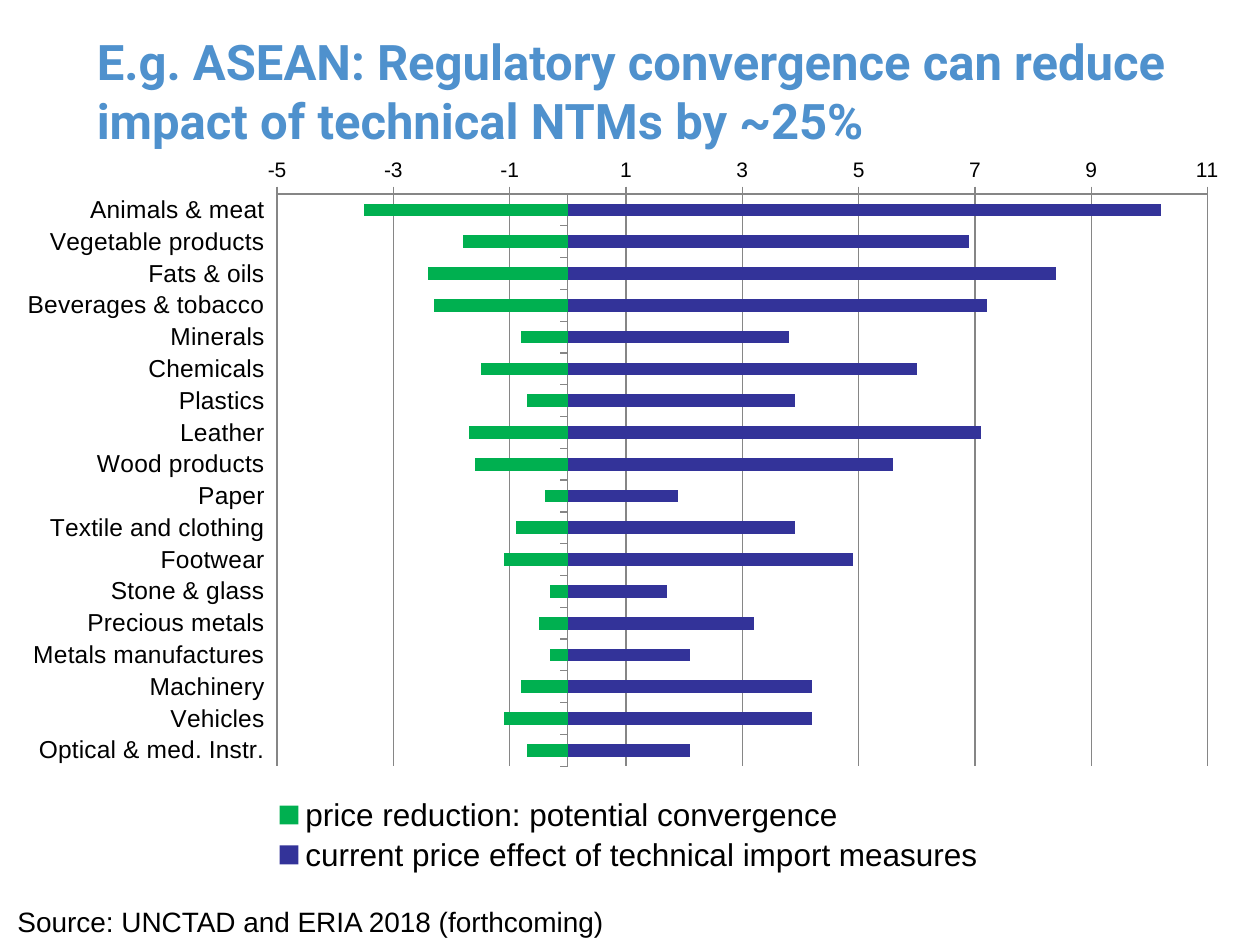
from lxml.etree import SubElement
from pptx import Presentation
from pptx.chart.data import CategoryChartData
from pptx.dml.color import RGBColor
from pptx.enum.chart import (XL_CHART_TYPE as ChartType, XL_LEGEND_POSITION as LegendPosition,
                             XL_TICK_LABEL_POSITION as LabelPosition, XL_TICK_MARK as TickMark)
from pptx.enum.text import MSO_ANCHOR as Anchor
from pptx.oxml import parse_xml
from pptx.oxml.ns import nsdecls, qn
from pptx.util import Inches, Pt

# Content
TITLE = "E.g. ASEAN: Regulatory convergence can reduce impact of technical NTMs by ~25%"
SOURCE = "Source: UNCTAD and ERIA 2018 (forthcoming)"
SERIES = [("price reduction: potential convergence", "00B050"),
          ("current price effect of technical import measures", "333399")]
PRICE_EFFECTS = [  # product group, potential reduction, current effect
    ("Animals & meat", -3.5, 10.2),
    ("Vegetable products", -1.8, 6.9),
    ("Fats & oils", -2.4, 8.4),
    ("Beverages & tobacco", -2.3, 7.2),
    ("Minerals", -0.8, 3.8),
    ("Chemicals", -1.5, 6),
    ("Plastics", -0.7, 3.9),
    ("Leather", -1.7, 7.1),
    ("Wood products", -1.6, 5.6),
    ("Paper", -0.4, 1.9),
    ("Textile and clothing", -0.9, 3.9),
    ("Footwear", -1.1, 4.9),
    ("Stone & glass", -0.3, 1.7),
    ("Precious metals", -0.5, 3.2),
    ("Metals manufactures", -0.3, 2.1),
    ("Machinery", -0.8, 4.2),
    ("Vehicles", -1.1, 4.2),
    ("Optical & med. Instr.", -0.7, 2.1),
]

# Places in inches; chart parts as (x, y, w, h) in inches on the slide
TITLE_BOX = (0.67, 0.36, 8.9, 0.71)
SOURCE_BOX = (0.04, 7.13, 5.12, 0.37)
CHART_BOX = (0.02, 1.15, 9.86, 5.83)
PLOT_BOX = (2.2, 1.54, 7.39, 4.54)
LEGEND_BOX = (2.14, 6.29, 5.7, 0.67)
GREY, BLACK = "868686", "000000"


def color(hex_string):
    return RGBColor.from_string(hex_string)


def style_font(font, size, hex_string=BLACK, name="Arial", bold=False):
    font.size, font.name, font.bold = Pt(size), name, bold
    font.color.rgb = color(hex_string)


def add_text(slide, box, text, anchor, **style):
    frame = slide.shapes.add_textbox(*map(Inches, box)).text_frame
    frame.word_wrap = True
    frame.vertical_anchor = anchor
    run = frame.paragraphs[0].add_run()
    run.text = text
    style_font(run.font, **style)


def manual_layout(box, inner=False):
    """Layout element that places a chart part as shares of the chart."""
    layout = parse_xml(f"<c:layout {nsdecls('c')}><c:manualLayout/></c:layout>")
    left, top, width, height = CHART_BOX
    x, y, w, h = box
    values = [("layoutTarget", "inner")] if inner else []
    values += [("xMode", "edge"), ("yMode", "edge"),
               ("x", (x - left) / width), ("y", (y - top) / height),
               ("w", w / width), ("h", h / height)]
    for tag, value in values:
        text = value if isinstance(value, str) else f"{value:.3f}"
        SubElement(layout[0], qn(f"c:{tag}")).set("val", text)
    return layout


def remove_layout(element):
    for old in element.findall(qn("c:layout")):
        element.remove(old)


def add_price_chart(slide):
    groups, *columns = zip(*PRICE_EFFECTS)
    data = CategoryChartData()
    data.categories = groups
    for (name, _), values in zip(SERIES, columns):
        data.add_series(name, values)
    chart = slide.shapes.add_chart(ChartType.BAR_STACKED, *map(Inches, CHART_BOX), data).chart
    chart.has_title = False
    style_font(chart.font, 10)

    # Bars
    plot = chart.plots[0]
    plot.gap_width, plot.overlap, plot.vary_by_categories = 150, 100, False
    for series, (_, fill) in zip(plot.series, SERIES):
        series.invert_if_negative = False
        series.format.fill.solid()
        series.format.fill.fore_color.rgb = color(fill)

    # Axes
    groups_axis, effect_axis = chart.category_axis, chart.value_axis
    groups_axis.reverse_order = True
    groups_axis.tick_label_position = LabelPosition.LOW
    groups_axis.has_major_gridlines = False
    effect_axis.minimum_scale, effect_axis.maximum_scale = -5, 11
    effect_axis.major_unit = 2
    effect_axis.has_major_gridlines = True
    effect_axis.tick_labels.number_format = "General"
    effect_axis.tick_labels.number_format_is_linked = False
    for axis, size in ((groups_axis, 14), (effect_axis, 12)):
        axis.major_tick_mark, axis.minor_tick_mark = TickMark.OUTSIDE, TickMark.NONE
        style_font(axis.tick_labels.font, size)
    for part in (groups_axis, effect_axis, effect_axis.major_gridlines):
        part.format.line.color.rgb = color(GREY)
        part.format.line.width = Pt(0.75)

    # Legend
    chart.has_legend = True
    legend = chart.legend
    legend.position = LegendPosition.BOTTOM
    legend.include_in_layout = False
    style_font(legend.font, 18)

    # Fixed places of plot and legend
    plot_area = chart.element.find(".//" + qn("c:plotArea"))
    legend_element = chart.element.find(".//" + qn("c:legend"))
    remove_layout(plot_area)
    remove_layout(legend_element)
    plot_area.insert(0, manual_layout(PLOT_BOX, inner=True))
    legend_element.find(qn("c:legendPos")).addnext(manual_layout(LEGEND_BOX))


def main():
    presentation = Presentation()
    presentation.slide_width, presentation.slide_height = Inches(10), Inches(7.5)
    slide = presentation.slides.add_slide(presentation.slide_layouts[6])
    add_text(slide, TITLE_BOX, TITLE, Anchor.MIDDLE,
             size=28, hex_string="4F91CD", name="Roboto", bold=True)
    add_text(slide, SOURCE_BOX, SOURCE, Anchor.TOP, size=16)
    add_price_chart(slide)
    presentation.save("out.pptx")


if __name__ == "__main__":
    main()
